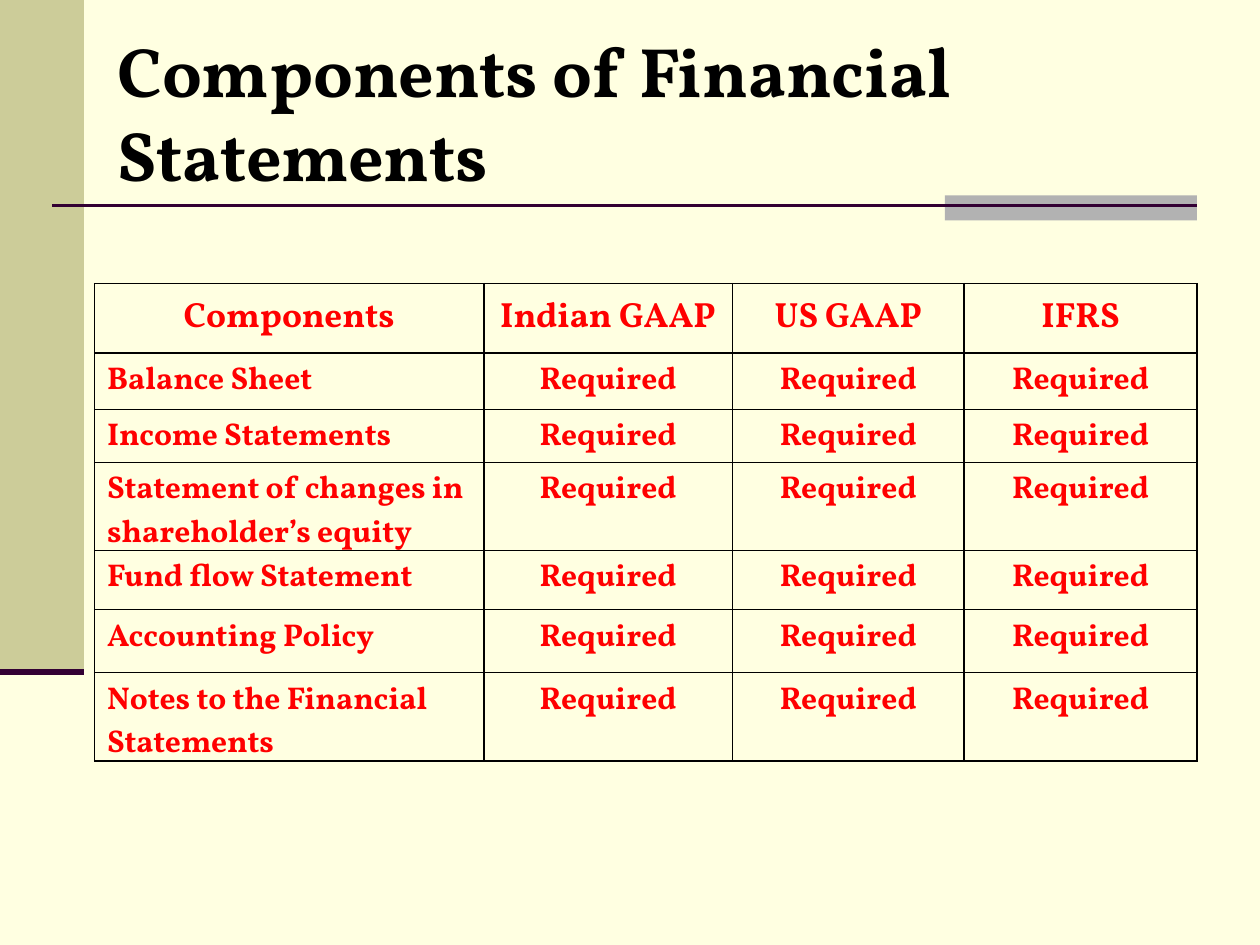
from lxml.etree import SubElement
from pptx import Presentation
from pptx.dml.color import RGBColor
from pptx.enum.shapes import MSO_CONNECTOR, MSO_SHAPE
from pptx.enum.text import MSO_ANCHOR, PP_ALIGN
from pptx.oxml.ns import qn
from pptx.util import Pt

CREAM = RGBColor(0xFF, 0xFF, 0xE1)
KHAKI = RGBColor(0xCC, 0xCC, 0x99)
GRAY = RGBColor(0xB2, 0xB2, 0xB2)
PLUM = RGBColor(0x33, 0x00, 0x33)
BLACK = RGBColor(0, 0, 0)
RED = RGBColor(0xFF, 0, 0)
FONT = "Vollkorn"

TITLE = "Components of Financial Statements"
HEADERS = ["Components", "Indian GAAP", "US GAAP", "IFRS"]
COMPONENTS = [
    "Balance Sheet",
    "Income Statements",
    "Statement of changes in\nshareholder’s equity",
    "Fund flow Statement",
    "Accounting Policy",
    "Notes to the Financial Statements",
]
STATUS = "Required"
ROWS = [HEADERS] + [[name] + [STATUS] * 3 for name in COMPONENTS]
COLUMN_WIDTHS = [222.5, 142, 132.5, 133]
ROW_HEIGHTS = [39.6, 32.4, 30.2, 50.4, 33.8, 36, 36]

BARS = [(0, 0, 48, 384, KHAKI), (540, 111.6, 144, 14.4, GRAY)]
RULES = [(30, 684, 117.4, 1.5), (0, 48, 384, 3.5)]  # left, right, y, weight


def add_bar(page, left, top, width, height, color):
    bar = page.shapes.add_shape(
        MSO_SHAPE.RECTANGLE, Pt(left), Pt(top), Pt(width), Pt(height))
    bar.shadow.inherit = False
    bar.fill.solid()
    bar.fill.fore_color.rgb = color
    bar.line.fill.background()


def add_rule(page, left, right, y, weight):
    rule = page.shapes.add_connector(
        MSO_CONNECTOR.STRAIGHT, Pt(left), Pt(y), Pt(right), Pt(y))
    rule.line.color.rgb = PLUM
    rule.line.width = Pt(weight)
    SubElement(rule._element.spPr, qn("a:effectLst"))


def style_text(frame, size, color, align):
    for para in frame.paragraphs:
        para.alignment = align
        para.font.name = FONT
        para.font.size = Pt(size)
        para.font.bold = True
        para.font.color.rgb = color


def add_borders(cell):
    properties = cell._tc.get_or_add_tcPr()
    for side in ("lnL", "lnR", "lnT", "lnB"):
        border = SubElement(properties, qn(f"a:{side}"), w=str(Pt(1)))
        fill = SubElement(border, qn("a:solidFill"))
        SubElement(fill, qn("a:srgbClr"), val=str(BLACK))


def add_comparison(page):
    table = page.shapes.add_table(
        len(ROWS), len(HEADERS), Pt(54), Pt(162),
        Pt(sum(COLUMN_WIDTHS)), Pt(sum(ROW_HEIGHTS))).table
    table.first_row = table.horz_banding = False
    for column, width in zip(table.columns, COLUMN_WIDTHS):
        column.width = Pt(width)
    for r, (texts, height) in enumerate(zip(ROWS, ROW_HEIGHTS)):
        table.rows[r].height = Pt(height)
        header = r == 0
        for c, text in enumerate(texts):
            cell = table.cell(r, c)
            cell.text = text
            cell.vertical_anchor = MSO_ANCHOR.MIDDLE if header else MSO_ANCHOR.TOP
            centered = header or c > 0
            style_text(cell.text_frame, 20 if header else 18, RED,
                       PP_ALIGN.CENTER if centered else PP_ALIGN.LEFT)
            add_borders(cell)
            cell.fill.background()


def main():
    deck = Presentation()
    deck.slide_width, deck.slide_height = Pt(720), Pt(540)
    page = deck.slides.add_slide(deck.slide_layouts[6])
    page.background.fill.solid()
    page.background.fill.fore_color.rgb = CREAM

    for bar in BARS:
        add_bar(page, *bar)
    for rule in RULES:
        add_rule(page, *rule)

    title = page.shapes.add_textbox(Pt(60), Pt(12), Pt(630), Pt(103))
    title.text_frame.word_wrap = True
    title.text_frame.text = TITLE
    style_text(title.text_frame, 40, BLACK, PP_ALIGN.LEFT)

    add_comparison(page)
    deck.save("out.pptx")


if __name__ == "__main__":
    main()
